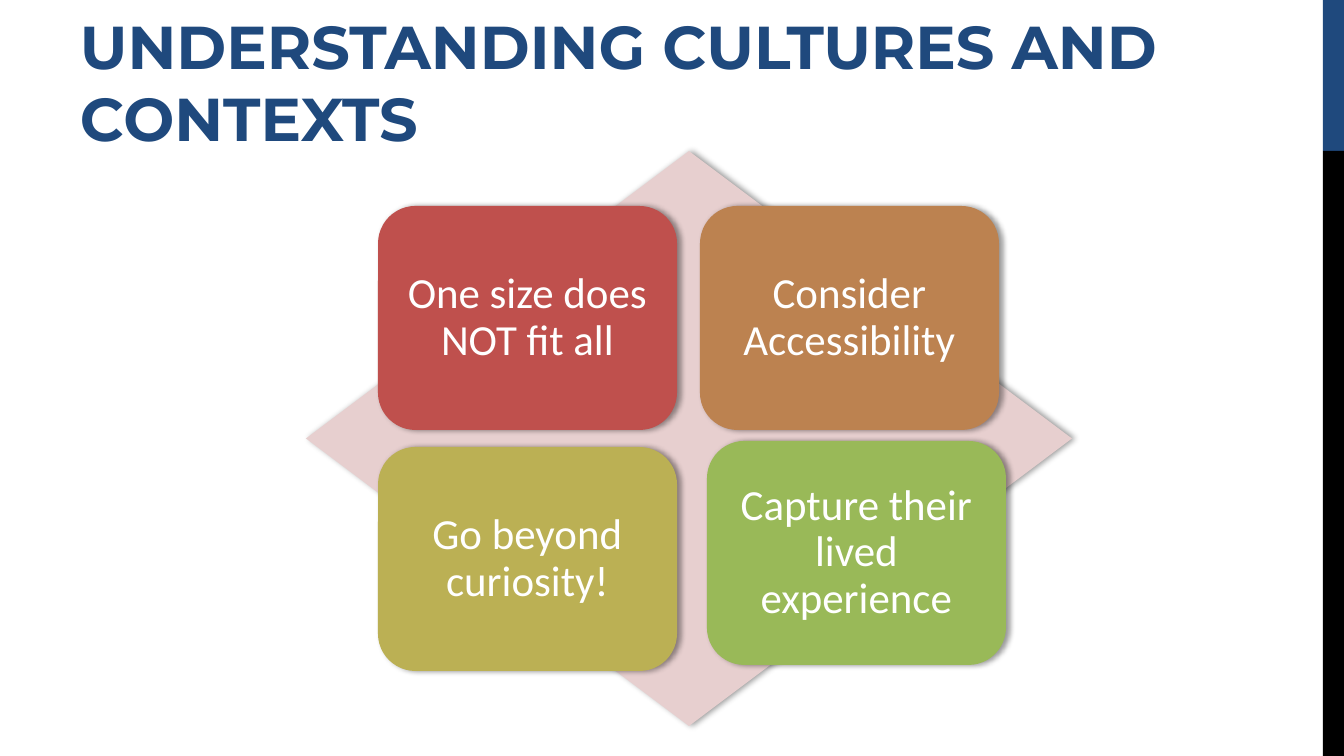
from lxml.etree import SubElement
from pptx import Presentation
from pptx.dml.color import RGBColor
from pptx.enum.shapes import MSO_SHAPE as Shape
from pptx.enum.text import MSO_ANCHOR as Anchor, PP_ALIGN as Align
from pptx.oxml.ns import qn
from pptx.util import Emu, Pt

EMU_PER_PX = 914400 / 134.4
NAVY, BLACK, WHITE = "1F497D", "000000", "FFFFFF"
CARD_WIDTH, CARD_HEIGHT = 299, 224


def px(length):
    return Emu(round(length * EMU_PER_PX))


def color(value):
    return RGBColor.from_string(value)


class SlideBuilder:
    heading_font = "Montserrat"
    body_font = "Calibri"

    def __init__(self, slide):
        self.slide = slide

    def block(self, kind, box, fill):
        block = self.slide.shapes.add_shape(kind, *map(px, box))
        block.shadow.inherit = False
        block.fill.solid()
        block.fill.fore_color.rgb = color(fill)
        block.line.fill.background()
        return block

    def shadow(self, block):
        effects = block._element.spPr.find(qn("a:effectLst"))
        outer = SubElement(effects, qn("a:outerShdw"), blurRad=str(Pt(3.1)),
                           dist=str(Pt(1.8)), dir="0", rotWithShape="0")
        tint = SubElement(outer, qn("a:srgbClr"), val=BLACK)
        SubElement(tint, qn("a:alpha"), val="40000")

    def label(self, frame, text, font, size, ink, insets, anchor):
        frame.word_wrap = True
        frame.vertical_anchor = anchor
        frame.margin_left = frame.margin_right = px(insets[0])
        frame.margin_top = frame.margin_bottom = px(insets[1])
        paragraph = frame.paragraphs[0]
        paragraph.text = text
        paragraph.font.name = font
        paragraph.font.size = Pt(size)
        paragraph.font.color.rgb = color(ink)
        return paragraph

    def title(self, text, box):
        frame = self.slide.shapes.add_textbox(*map(px, box)).text_frame
        heading = self.label(frame, text, self.heading_font, 32.4, NAVY,
                             (13, 7), Anchor.BOTTOM)
        heading.font.bold = True
        heading.alignment = Align.LEFT

    def diamond(self, box, fill):
        self.shadow(self.block(Shape.DIAMOND, box, fill))

    def card(self, text, left, top, fill):
        box = (left, top, CARD_WIDTH, CARD_HEIGHT)
        card = self.block(Shape.ROUNDED_RECTANGLE, box, fill)
        card.adjustments[0] = 0.167
        self.shadow(card)
        caption = self.label(card.text_frame, text, self.body_font, 23, WHITE,
                             (16, 13), Anchor.MIDDLE)
        caption.alignment = Align.CENTER
        caption.line_spacing = 0.9


def main():
    deck = Presentation()
    deck.slide_width, deck.slide_height = px(1344), px(756)
    builder = SlideBuilder(deck.slides.add_slide(deck.slide_layouts[6]))

    builder.block(Shape.RECTANGLE, (1323, 0, 21, 151), NAVY)
    builder.block(Shape.RECTANGLE, (1323, 151, 21, 605), BLACK)
    builder.title("UNDERSTANDING CULTURES AND CONTEXTS", (67, 2, 1210, 159))

    builder.diamond((306, 151, 766, 575), "E7CFCF")
    for principle in (
        ("One size does NOT fit all", 378, 206, "BF504D"),
        ("Consider Accessibility", 700, 206, "BC8250"),
        ("Go beyond curiosity!", 378, 447, "BBB054"),
        ("Capture their lived experience", 707, 441, "99B958"),
    ):
        builder.card(*principle)

    deck.save("out.pptx")


if __name__ == "__main__":
    main()
